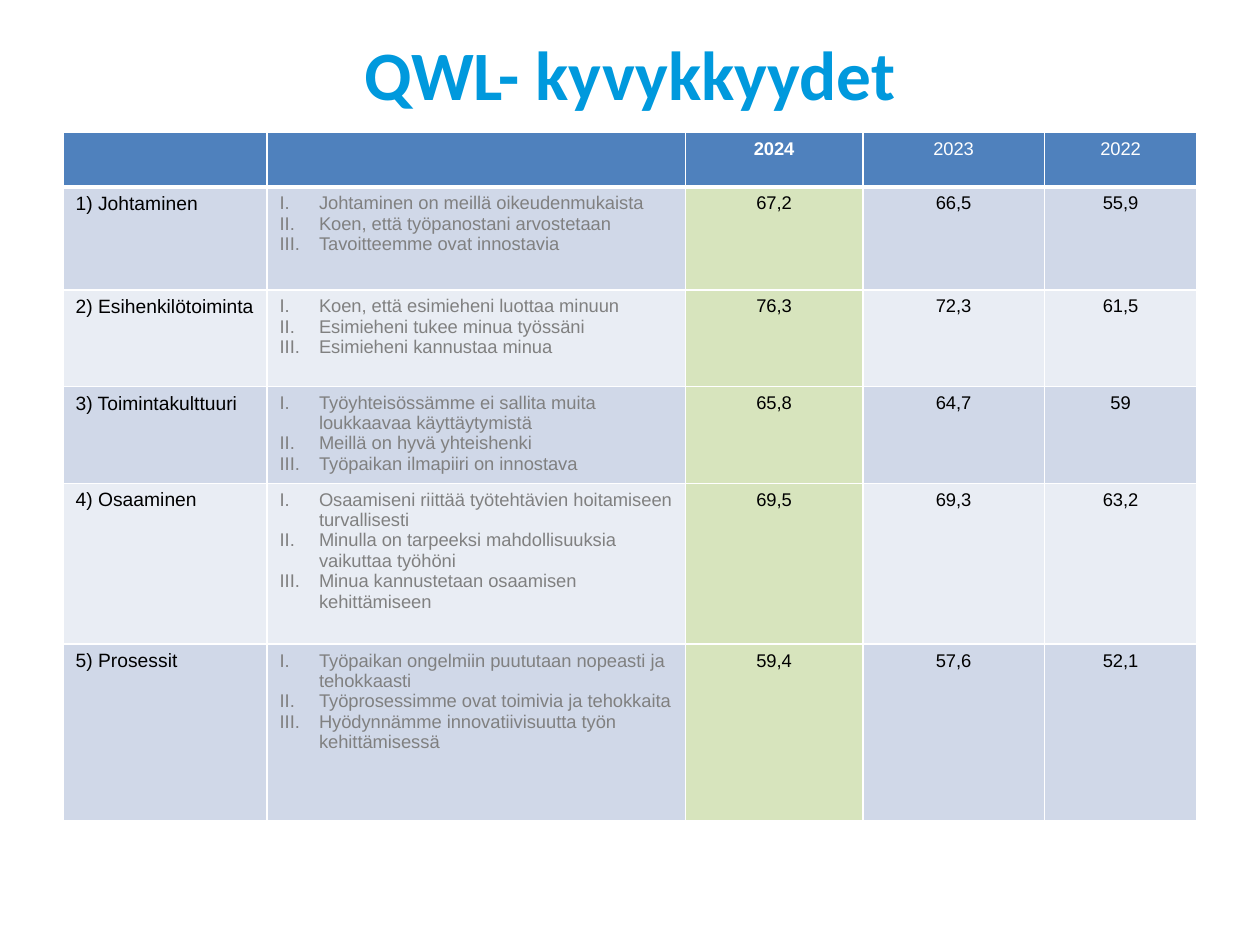
import lxml.etree
import pptx
import pptx.dml.color
import pptx.enum.text
import pptx.oxml.ns
import pptx.util

Pt = pptx.util.Pt
ALIGN = pptx.enum.text.PP_ALIGN
COLORS = {
    "title": "0099DD", "header": "4F81BD", "odd": "D0D8E8", "even": "E9EDF4",
    "latest": "D7E4BD", "white": "FFFFFF", "black": "000000", "grey": "808080",
}
FORMATS = {
    "title": {"name": "Calibri", "size": Pt(39.6), "bold": True, "color": "title"},
    "latest_year": {"name": "Arial", "size": Pt(10.5), "bold": True, "color": "white"},
    "year": {"name": "Arial", "size": Pt(10.5), "bold": False, "color": "white"},
    "capability": {"name": "Arial", "size": Pt(11), "bold": False, "color": "black"},
    "statement": {"name": "Arial", "size": Pt(10.5), "bold": False, "color": "grey"},
    "score": {"name": "Arial", "size": Pt(10.5), "bold": False, "color": "black"},
}
YEARS = ["2024", "2023", "2022"]
CAPABILITIES = [
    ("1) Johtaminen",
     ["Johtaminen on meillä oikeudenmukaista",
      "Koen, että työpanostani arvostetaan",
      "Tavoitteemme ovat innostavia"],
     ["67,2", "66,5", "55,9"]),
    ("2) Esihenkilötoiminta",
     ["Koen, että esimieheni luottaa minuun",
      "Esimieheni tukee minua työssäni",
      "Esimieheni kannustaa minua"],
     ["76,3", "72,3", "61,5"]),
    ("3) Toimintakulttuuri",
     ["Työyhteisössämme ei sallita muita loukkaavaa käyttäytymistä",
      "Meillä on hyvä yhteishenki",
      "Työpaikan ilmapiiri on innostava"],
     ["65,8", "64,7", "59"]),
    ("4) Osaaminen",
     ["Osaamiseni riittää työtehtävien hoitamiseen turvallisesti",
      "Minulla on tarpeeksi mahdollisuuksia vaikuttaa työhöni",
      "Minua kannustetaan osaamisen kehittämiseen"],
     ["69,5", "69,3", "63,2"]),
    ("5) Prosessit",
     ["Työpaikan ongelmiin puututaan nopeasti ja tehokkaasti",
      "Työprosessimme ovat toimivia ja tehokkaita",
      "Hyödynnämme innovatiivisuutta työn kehittämisessä"],
     ["59,4", "57,6", "52,1"]),
]
COLUMN_WIDTHS = [116.6, 239, 101.5, 103.7, 87.2]
ROW_HEIGHTS = [31.2, 59, 55, 55.4, 92, 100.8]


class SlideBuilder:
    """Holds the style and the current slide, and adds its elements."""

    def __init__(self, presentation):
        self.slide = presentation.slides.add_slide(presentation.slide_layouts[5])

    def color(self, name):
        return pptx.dml.color.RGBColor.from_string(COLORS[name])

    def text(self, frame, lines, style, align, numbered=False):
        for index, line in enumerate(lines):
            paragraph = frame.paragraphs[0] if index == 0 else frame.add_paragraph()
            paragraph.alignment = align
            if numbered:
                self.number(paragraph)
            run = paragraph.add_run()
            run.text = line
            for key, value in FORMATS[style].items():
                if key == "color":
                    run.font.color.rgb = self.color(value)
                else:
                    setattr(run.font, key, value)

    def number(self, paragraph):
        properties = paragraph._p.get_or_add_pPr()
        properties.set("marL", str(Pt(22.5)))
        properties.set("indent", str(-Pt(22.5)))
        lxml.etree.SubElement(
            properties, pptx.oxml.ns.qn("a:buAutoNum"), type="romanUcPeriod")

    def title(self, text, left, top, width, height):
        shape = self.slide.shapes.title
        box = {"left": left, "top": top, "width": width, "height": height}
        for key, value in box.items():
            setattr(shape, key, Pt(value))
        shape.text_frame.vertical_anchor = pptx.enum.text.MSO_ANCHOR.MIDDLE
        self.text(shape.text_frame, [text], "title", ALIGN.CENTER)

    def table(self, left, top, widths, heights):
        table = self.slide.shapes.add_table(
            len(heights), len(widths), Pt(left), Pt(top),
            Pt(sum(widths)), Pt(sum(heights))).table
        for column, width in zip(table.columns, widths):
            column.width = Pt(width)
        for row, height in zip(table.rows, heights):
            row.height = Pt(height)
        return table

    def cell(self, cell, fill, top=1, bottom=1):
        cell.fill.solid()
        cell.fill.fore_color.rgb = self.color(fill)
        properties = cell._tc.get_or_add_tcPr()
        borders = {"a:lnL": 1, "a:lnR": 1, "a:lnT": top, "a:lnB": bottom}
        for index, (tag, width) in enumerate(borders.items()):
            line = lxml.etree.Element(pptx.oxml.ns.qn(tag), w=str(Pt(width)))
            solid = lxml.etree.SubElement(line, pptx.oxml.ns.qn("a:solidFill"))
            lxml.etree.SubElement(
                solid, pptx.oxml.ns.qn("a:srgbClr"), val=COLORS["white"])
            properties.insert(index, line)

    def header_row(self, table, years):
        for column in range(len(table.columns)):
            self.cell(table.cell(0, column), "header", bottom=3)
        for column, year in enumerate(years, 2):
            style = "latest_year" if column == 2 else "year"
            self.text(table.cell(0, column).text_frame, [year], style, ALIGN.CENTER)

    def capability_row(self, table, row, name, statements, scores):
        band = "odd" if row % 2 else "even"
        for column in range(len(table.columns)):
            fill = "latest" if column == 2 else band
            self.cell(table.cell(row, column), fill, top=3 if row == 1 else 1)
        self.text(table.cell(row, 0).text_frame, [name], "capability", ALIGN.LEFT)
        self.text(table.cell(row, 1).text_frame, statements, "statement",
                  ALIGN.LEFT, numbered=True)
        for column, score in enumerate(scores, 2):
            self.text(table.cell(row, column).text_frame, [score], "score",
                      ALIGN.CENTER)


def main():
    presentation = pptx.Presentation()
    presentation.slide_width = Pt(720)
    presentation.slide_height = Pt(540)
    builder = SlideBuilder(presentation)
    builder.title("QWL- kyvykkyydet", 36, 11.5, 648, 60)
    table = builder.table(36, 75.6, COLUMN_WIDTHS, ROW_HEIGHTS)
    builder.header_row(table, YEARS)
    for row, capability in enumerate(CAPABILITIES, 1):
        builder.capability_row(table, row, *capability)
    presentation.save("out.pptx")


if __name__ == "__main__":
    main()
